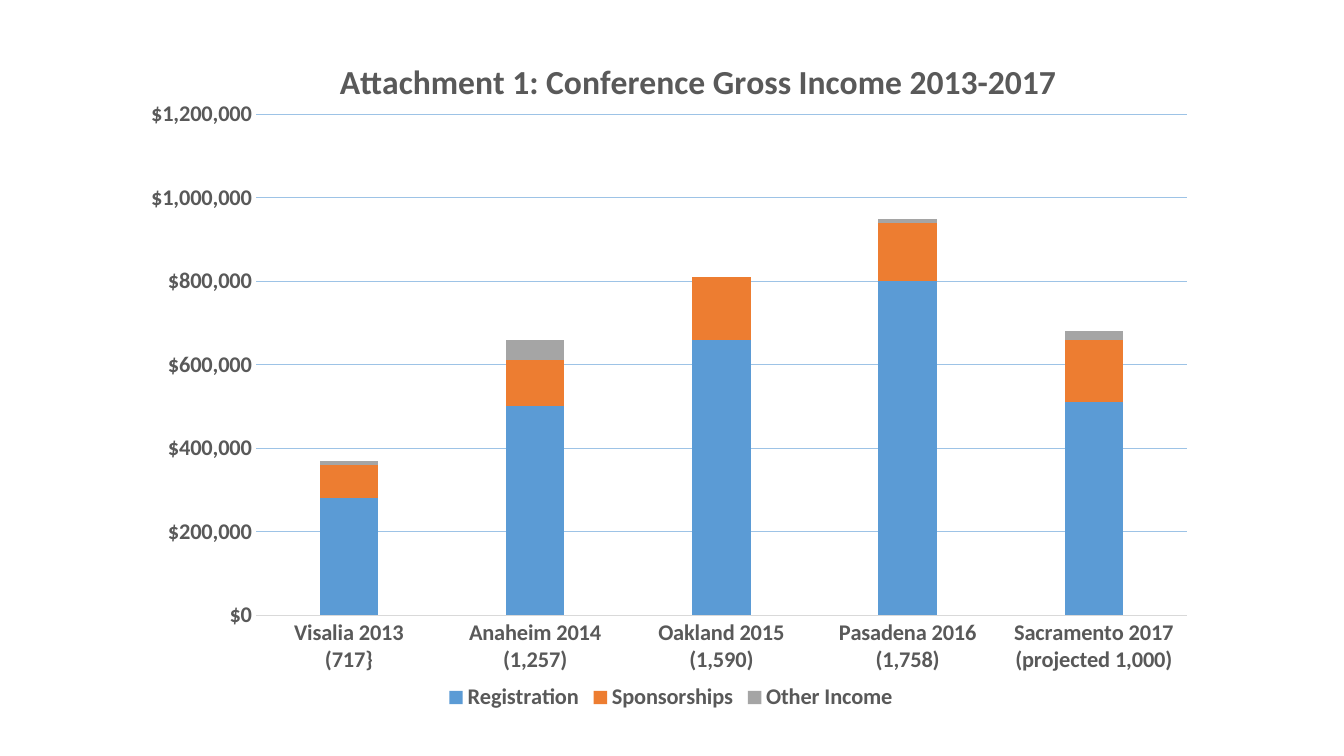
import pptx
import pptx.util
import pptx.dml.color
import pptx.chart.data
import pptx.enum.chart
import pptx.oxml
import pptx.oxml.ns

Pt = pptx.util.Pt
GREY = "595959"


def colour(hex_string):
    return pptx.dml.color.RGBColor.from_string(hex_string)


def place(parent, index, values):
    """Give a chart part a manual layout, in fractions of the chart."""
    for old in parent.findall(pptx.oxml.ns.qn("c:layout")):
        parent.remove(old)
    items = "".join(f'<c:{tag} val="{value}"/>' for tag, value in values.items())
    parent.insert(index, pptx.oxml.parse_xml(
        f'<c:layout {pptx.oxml.ns.nsdecls("c")}>'
        f"<c:manualLayout>{items}</c:manualLayout></c:layout>"))


deck = pptx.Presentation()
deck.slide_width, deck.slide_height = Pt(960), Pt(540)
slide = deck.slides.add_slide(deck.slide_layouts[6])

# Income by conference
income = pptx.chart.data.CategoryChartData(number_format='"$"#,##0')
income.categories = [
    "Visalia 2013\n(717}",
    "Anaheim 2014 (1,257)",
    "Oakland 2015\n(1,590)",
    "Pasadena 2016 (1,758)",
    "Sacramento 2017 (projected 1,000)",
]
sources = {
    "Registration": ("5B9BD5", [280000, 500000, 660000, 800000, 510000]),
    "Sponsorships": ("ED7D31", [80000, 110000, 150000, 140000, 150000]),
    "Other Income": ("A5A5A5", [10000, 50000, 0, 10000, 20000]),
}
for name, (fill, values) in sources.items():
    income.add_series(name, values)

chart = slide.shapes.add_chart(
    pptx.enum.chart.XL_CHART_TYPE.COLUMN_STACKED,
    Pt(103), Pt(23), Pt(752.4), Pt(488.2), income).chart

# Columns
plot = chart.plots[0]
plot.gap_width, plot.overlap, plot.vary_by_categories = 219, 100, False
for series in plot.series:
    series.invert_if_negative = False
    series.format.fill.solid()
    series.format.fill.fore_color.rgb = colour(sources[series.name][0])

# Title and legend
chart.has_title = True
title = chart.chart_title
title.include_in_layout = False
title.text_frame.text = "Attachment 1: Conference Gross Income 2013-2017"
chart.has_legend = True
chart.legend.position = pptx.enum.chart.XL_LEGEND_POSITION.BOTTOM
chart.legend.include_in_layout = False

# Axes
conferences, dollars = chart.category_axis, chart.value_axis
for axis in (conferences, dollars):
    axis.major_tick_mark = pptx.enum.chart.XL_TICK_MARK.NONE
    axis.minor_tick_mark = pptx.enum.chart.XL_TICK_MARK.NONE
dollars.minimum_scale, dollars.maximum_scale, dollars.major_unit = 0, 1200000, 200000
dollars.tick_labels.number_format = '"$"#,##0'
dollars.tick_labels.number_format_is_linked = False
dollars.has_major_gridlines = True
dollars.format.line.fill.background()
for line, hex_string in ((conferences.format.line, "D9D9D9"),
                         (dollars.major_gridlines.format.line, "9DC3E6")):
    line.width = Pt(0.75)
    line.color.rgb = colour(hex_string)

# Fonts
title_font = title.text_frame.paragraphs[0].runs[0].font
for font, size, hex_string in (
        (chart.font, 14, "000000"),
        (title_font, 24, GREY),
        (chart.legend.font, 16, GREY),
        (conferences.tick_labels.font, 16, GREY),
        (dollars.tick_labels.font, 16, GREY)):
    for key, value in {"name": "Calibri", "size": Pt(size), "bold": True}.items():
        setattr(font, key, value)
    font.color.rgb = colour(hex_string)

# Positions inside the chart
place(title._element, 1, {"xMode": "edge", "yMode": "edge", "x": 0.18, "y": 0.03})
place(chart._chartSpace.chart.plotArea, 0, {
    "layoutTarget": "inner", "xMode": "edge", "yMode": "edge",
    "x": 0.106, "y": 0.12, "w": 0.884, "h": 0.733})

deck.save("out.pptx")
